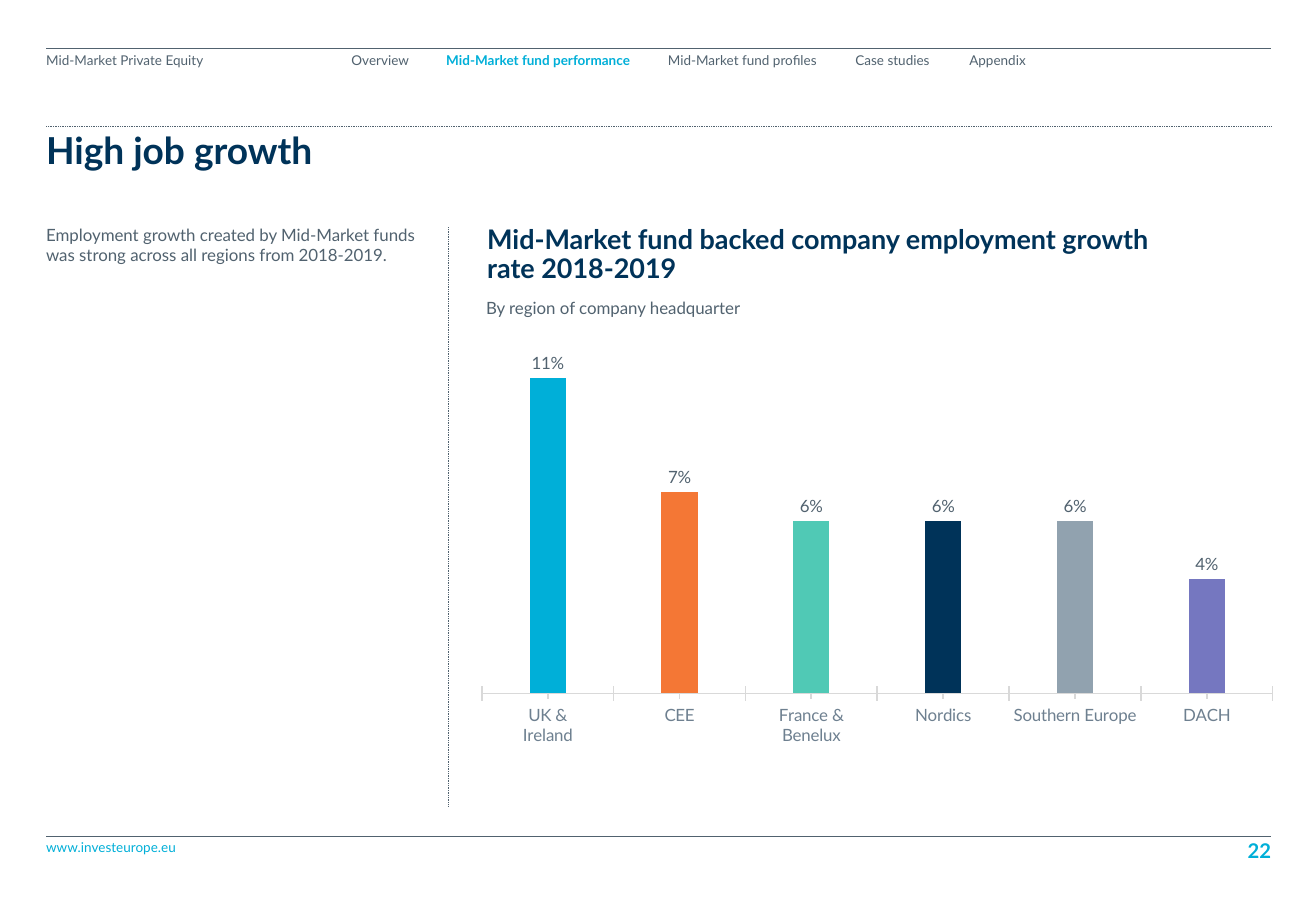
from dataclasses import dataclass

from lxml import etree
from pptx import Presentation
from pptx import util as u
from pptx.chart import data as chart_data
from pptx.dml.color import RGBColor
from pptx.enum import chart as charts, dml, shapes, text
from pptx.oxml import parse_xml
from pptx.oxml.ns import nsdecls, qn

LEFT, CENTER, RIGHT = text.PP_ALIGN.LEFT, text.PP_ALIGN.CENTER, text.PP_ALIGN.RIGHT


@dataclass(frozen=True)
class Theme:
    font: str = "Lato"
    slate: str = "51626F"
    cyan: str = "00AFD8"
    navy: str = "003359"
    axis_text: str = "6E8090"
    axis_line: str = "D9D9D9"
    bars: tuple = ("00AFD8", "F47735", "50C9B5", "003359", "91A2AF", "7577C0")
    small: float = 8
    body: float = 10
    number: float = 12
    heading: float = 16
    title: float = 22


def rgb(code):
    return RGBColor.from_string(code)


def apply(target, values):
    for name, value in values.items():
        setattr(target, name, value)


class SlideBuilder:
    """Places elements on a grid whose columns and rows are 0.1 inch."""

    columns, rows = 108.3, 75

    def __init__(self, theme):
        self.theme = theme
        self.presentation = Presentation()
        apply(self.presentation, {"slide_width": self.grid(self.columns),
                                  "slide_height": self.grid(self.rows)})
        self.slide = self.presentation.slides.add_slide(self.presentation.slide_layouts[6])

    def grid(self, cells):
        return u.Inches(cells / 10)

    def style(self, font, size, color, bold=False):
        apply(font, {"name": self.theme.font, "size": u.Pt(size), "bold": bold})
        font.color.rgb = rgb(color)

    def line(self, start, end, dotted=False):
        points = [self.grid(cells) for cells in (*start, *end)]
        connector = self.slide.shapes.add_connector(shapes.MSO_CONNECTOR.STRAIGHT, *points)
        connector.line.width = u.Pt(0.5)
        connector.line.color.rgb = rgb(self.theme.slate)
        if dotted:
            connector.line.dash_style = dml.MSO_LINE.ROUND_DOT
        etree.SubElement(connector._element.spPr, qn("a:effectLst"))

    def text(self, box, words, size, color, bold=False, align=LEFT, inset=0, spacing=1,
             anchor=text.MSO_ANCHOR.TOP):
        shape = self.slide.shapes.add_textbox(*map(self.grid, box))
        frame = shape.text_frame
        apply(frame, {"word_wrap": True, "vertical_anchor": anchor,
                      "margin_left": 0, "margin_right": 0,
                      "margin_top": self.grid(inset), "margin_bottom": 0})
        paragraph = frame.paragraphs[0]
        apply(paragraph, {"alignment": align, "line_spacing": spacing})
        run = paragraph.add_run()
        run.text = words
        self.style(run.font, size, color, bold)

    def column_chart(self, box, growth, plot_area):
        theme = self.theme
        values = chart_data.CategoryChartData(number_format="0%")
        values.categories = list(growth)
        values.add_series("Series 1", list(growth.values()))
        chart = self.slide.shapes.add_chart(
            charts.XL_CHART_TYPE.COLUMN_CLUSTERED, *map(self.grid, box), values).chart
        apply(chart, {"has_legend": False, "has_title": False})
        self.style(chart.font, theme.body, theme.slate)

        # Bars and their labels
        plot = chart.plots[0]
        apply(plot, {"gap_width": 265, "overlap": -27,
                     "vary_by_categories": False, "has_data_labels": True})
        for index, color in enumerate(theme.bars):
            fill = plot.series[0].points[index].format.fill
            fill.solid()
            fill.fore_color.rgb = rgb(color)
        apply(plot.data_labels, {"show_value": True, "number_format": "0%",
                                 "number_format_is_linked": False,
                                 "position": charts.XL_LABEL_POSITION.OUTSIDE_END})
        self.style(plot.data_labels.font, theme.body, theme.slate)

        # Axes
        apply(chart.value_axis, {"visible": False, "has_major_gridlines": False,
                                 "minimum_scale": 0, "maximum_scale": 0.12})
        axis = chart.category_axis
        apply(axis, {"major_tick_mark": charts.XL_TICK_MARK.CROSS,
                     "minor_tick_mark": charts.XL_TICK_MARK.CROSS})
        axis.format.line.width = u.Pt(1)
        axis.format.line.color.rgb = rgb(theme.axis_line)
        self.style(axis.tick_labels.font, theme.body, theme.axis_text)

        # Fixed inner plot area
        area = chart._chartSpace.chart.plotArea
        for layout in area.findall(qn("c:layout")):
            area.remove(layout)
        settings = [("layoutTarget", "inner"), ("xMode", "edge"), ("yMode", "edge"),
                    *zip("xywh", plot_area)]
        items = "".join(f'<c:{name} val="{value}"/>' for name, value in settings)
        area.insert(0, parse_xml(f'<c:layout {nsdecls("c")}><c:manualLayout>{items}'
                                 '</c:manualLayout></c:layout>'))


def main():
    theme = Theme()
    builder = SlideBuilder(theme)
    left, right = 3.8, 104.6
    top, bottom = 4, 68.9

    # Rules
    for row, dotted in ((top, False), (bottom, False), (10.4, True)):
        builder.line((left, row), (right, row), dotted)
    builder.line((36.9, 18.7), (36.9, 66.4), dotted=True)

    # Navigation
    navigation = [
        ("Mid-Market Private Equity", left, 18.9, LEFT),
        ("Overview", 28.1, 6.4, CENTER),
        ("Mid-Market fund performance", 36.4, 15.8, CENTER),
        ("Mid-Market fund profiles", 54.6, 13, CENTER),
        ("Case studies", 70, 6.9, CENTER),
        ("Appendix", 79.4, 5.4, CENTER),
    ]
    for label, column, width, align in navigation:
        active = label == "Mid-Market fund performance"
        builder.text((column, top, width, 1.6), label, theme.small,
                     theme.cyan if active else theme.slate, active, align,
                     inset=0.4, spacing=0.9)

    # Title and introduction
    builder.text((left, 10.5, right - left, 4.1), "High job growth", theme.title,
                 theme.navy, True, inset=0.4, spacing=0.9)
    builder.text((left, 18.5, 31.5, 37.4),
                 "Employment growth created by Mid-Market funds was strong across all "
                 "regions from 2018-2019.", theme.body, theme.slate)

    # Chart with its headings
    builder.text((40.1, 18.6, 55.7, 4.8),
                 "Mid-Market fund backed company employment growth rate 2018-2019",
                 theme.heading, theme.navy, True, spacing=0.9)
    builder.text((40, 24.5, 64.6, 2.2), "By region of company headquarter",
                 theme.body, theme.slate)
    growth = {"UK &\nIreland": 0.11, "CEE": 0.07, "France &\nBenelux": 0.06,
              "Nordics": 0.06, "Southern Europe": 0.06, "DACH": 0.04}
    builder.column_chart((38.3, 27.3, 67.8, 35.9), growth, (0.02, 0.04, 0.96, 0.79))

    # Footer
    builder.text((left, 69.1, 36.6, 1.3), "www.investeurope.eu", theme.small, theme.cyan)
    builder.text((80.2, 69, 24.4, 2), "22", theme.number, theme.cyan, True, RIGHT,
                 anchor=text.MSO_ANCHOR.BOTTOM)

    builder.presentation.save("out.pptx")


if __name__ == "__main__":
    main()
